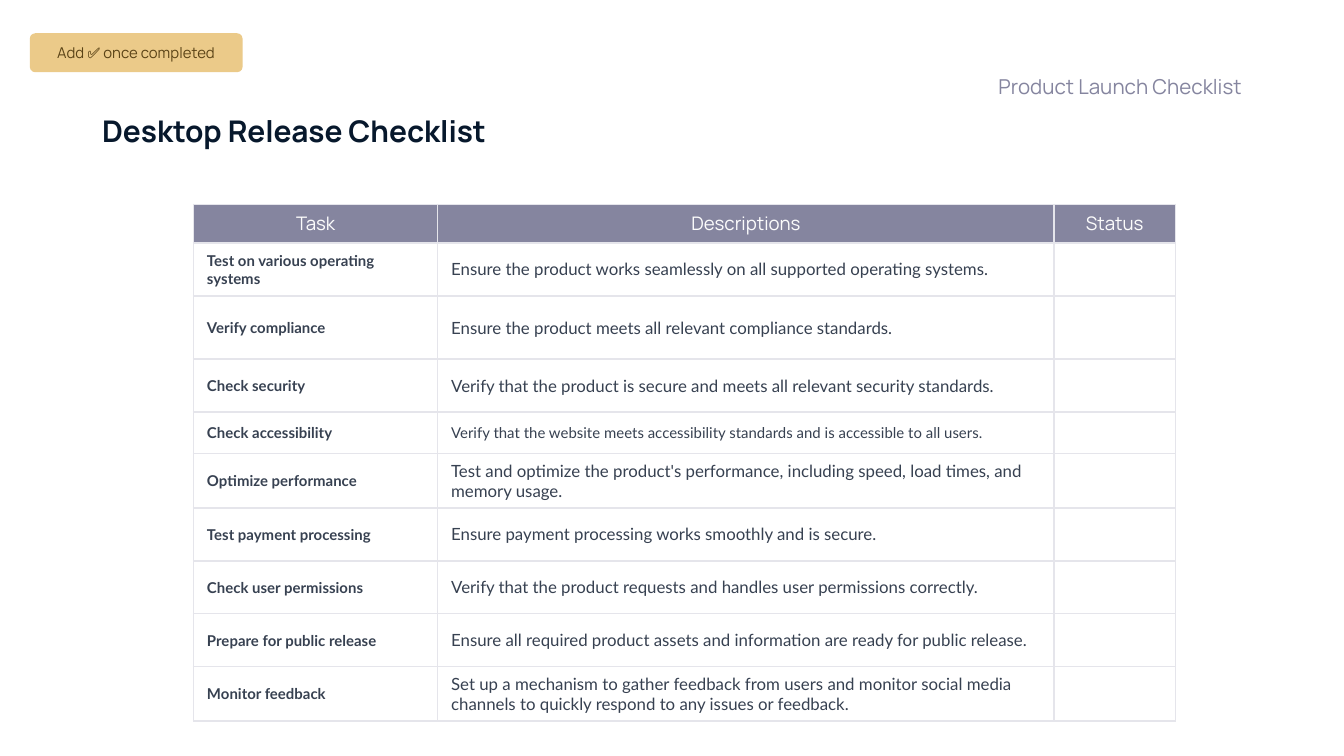
import pptx
import pptx.util
import pptx.dml.color
import pptx.enum.shapes
import pptx.enum.text
import pptx.oxml.ns
import lxml.etree
from dataclasses import dataclass

Pt = pptx.util.Pt
Align = pptx.enum.text.PP_ALIGN
Anchor = pptx.enum.text.MSO_ANCHOR
qn = pptx.oxml.ns.qn


@dataclass(frozen=True)
class Theme:
    head: str = "Manrope"
    body: str = "Lato"
    navy: str = "07182C"
    mauve: str = "85859F"
    pale: str = "FCFCFC"
    slate: str = "374151"
    rule: str = "E5E5EB"
    gold: str = "EBCA89"
    brown: str = "5A4316"
    title: float = 16
    label: float = 11
    top: float = 10
    text: float = 9
    small: float = 8
    line: float = 0.75


theme = Theme()

title = "Desktop Release Checklist"
label = "Product Launch Checklist"
badge = "Add ✅ once completed"
heads = ["Task", "Descriptions", "Status"]
tasks = [
    ("Test on various operating systems",
     "Ensure the product works seamlessly on all supported operating systems.", theme.text),
    ("Verify compliance",
     "Ensure the product meets all relevant compliance standards.", theme.text),
    ("Check security",
     "Verify that the product is secure and meets all relevant security standards.", theme.text),
    ("Check accessibility",
     "Verify that the website meets accessibility standards and is accessible to all users.",
     theme.small),
    ("Optimize performance",
     "Test and optimize the product's performance, including speed, load times, and memory usage.",
     theme.text),
    ("Test payment processing",
     "Ensure payment processing works smoothly and is secure.", theme.text),
    ("Check user permissions",
     "Verify that the product requests and handles user permissions correctly.", theme.text),
    ("Prepare for public release",
     "Ensure all required product assets and information are ready for public release.",
     theme.text),
    ("Monitor feedback",
     "Set up a mechanism to gather feedback from users and monitor social media channels "
     "to quickly respond to any issues or feedback.", theme.text),
]
widths = [130.8, 330.2, 65]
heights = [20.4, 28.4, 33.8, 28.4, 22.4, 29, 28.4, 28.4, 28.4, 29]


def color(code):
    return pptx.dml.color.RGBColor.from_string(code)


def write(frame, text, size, ink, face=theme.head, bold=False, align=Align.LEFT):
    para = frame.paragraphs[0]
    para.alignment = align
    run = para.add_run()
    run.text = text
    run.font.size = Pt(size)
    run.font.name = face
    run.font.bold = bold
    run.font.color.rgb = color(ink)


def place(shape, left, top, width, height):
    shape.left, shape.top = Pt(left), Pt(top)
    shape.width, shape.height = Pt(width), Pt(height)


def inset(frame, anchor, base=7.2):
    frame.word_wrap = True
    frame.auto_size = pptx.enum.text.MSO_AUTO_SIZE.NONE
    frame.vertical_anchor = anchor
    frame.margin_left = frame.margin_right = frame.margin_top = Pt(7.2)
    frame.margin_bottom = Pt(base)


def border(cell):
    props = cell._tc.get_or_add_tcPr()
    for side in ("lnL", "lnR", "lnT", "lnB"):
        line = lxml.etree.SubElement(props, qn("a:" + side), w=str(Pt(theme.line)))
        fill = lxml.etree.SubElement(line, qn("a:solidFill"))
        lxml.etree.SubElement(fill, qn("a:srgbClr"), val=theme.rule)


def build():
    deck = pptx.Presentation()
    deck.slide_width, deck.slide_height = Pt(720), Pt(405)
    slide = deck.slides.add_slide(deck.slide_layouts[5])
    shapes = slide.shapes

    name = shapes.title
    place(name, 47.5, 53.3, 302.4, 33.8)
    inset(name.text_frame, Anchor.TOP)
    write(name.text_frame, title, theme.title, theme.navy, bold=True)

    table = shapes.add_table(len(heights), len(widths), Pt(103.7), Pt(109.4),
                             Pt(sum(widths)), Pt(sum(heights))).table
    for col, width in zip(table.columns, widths):
        col.width = Pt(width)
    for row, height in zip(table.rows, heights):
        row.height = Pt(height)
    for cell in table.iter_cells():
        border(cell)
        cell.fill.background()
        cell.vertical_anchor = Anchor.MIDDLE
    for col, text in enumerate(heads):
        cell = table.cell(0, col)
        cell.fill.solid()
        cell.fill.fore_color.rgb = color(theme.mauve)
        write(cell.text_frame, text, theme.top, theme.pale, align=Align.CENTER)
    for row, (task, about, size) in enumerate(tasks, 1):
        write(table.cell(row, 0).text_frame, task, theme.small, theme.slate, theme.body, True)
        write(table.cell(row, 1).text_frame, about, size, theme.slate, theme.body)
        para = table.cell(row, 2).text_frame.paragraphs[0]
        lxml.etree.SubElement(para._p, qn("a:endParaRPr"), sz=str(int(theme.small * 100)))

    note = shapes.add_textbox(Pt(360), Pt(33.1), Pt(312.5), Pt(23.8))
    inset(note.text_frame, Anchor.BOTTOM, 4.3)
    write(note.text_frame, label, theme.label, theme.mauve, align=Align.RIGHT)

    tag = shapes.add_shape(pptx.enum.shapes.MSO_SHAPE.ROUNDED_RECTANGLE,
                           Pt(16), Pt(17.8), Pt(114), Pt(20.9))
    tag.adjustments[0] = 0.14
    tag.shadow.inherit = False
    tag.fill.solid()
    tag.fill.fore_color.rgb = color(theme.gold)
    tag.line.fill.background()
    inset(tag.text_frame, Anchor.MIDDLE, 7.2)
    write(tag.text_frame, badge, theme.small, theme.brown, align=Align.CENTER)

    deck.save("out.pptx")


if __name__ == "__main__":
    build()
